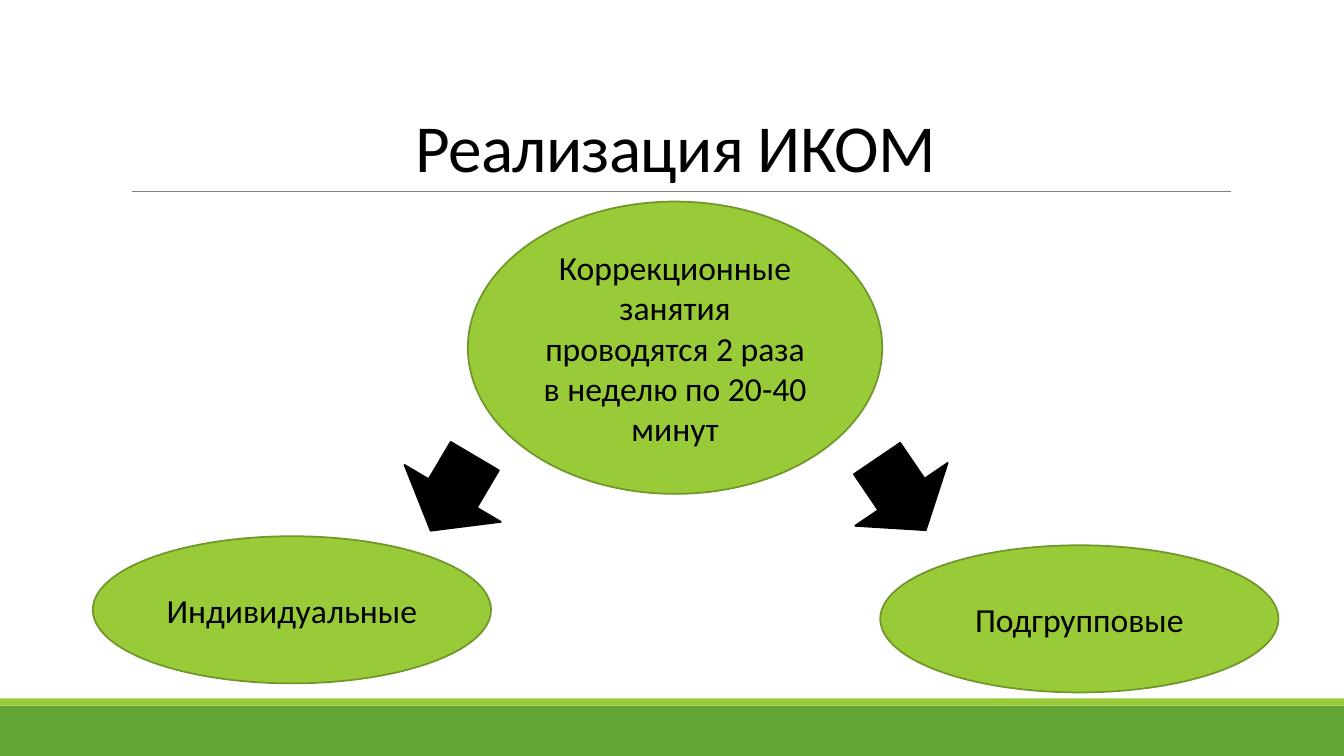
import pptx
import pptx.util
import pptx.dml.color
import pptx.enum.shapes
import pptx.enum.text
import pptx.oxml
from pptx.util import Inches

SHAPES = pptx.enum.shapes.MSO_SHAPE
ANCHORS = pptx.enum.text.MSO_ANCHOR
BLACK, LIME, GREEN, OLIVE, GREY = "000000", "99CB38", "63A537", "719629", "808080"


def add_figure(kind, box, fill, outline=None):
    figure = slide.shapes.add_shape(kind, *[Inches(length) for length in box])
    figure.shadow.inherit = False
    figure.fill.solid()
    figure.fill.fore_color.rgb = pptx.dml.color.RGBColor.from_string(fill)
    if outline:
        figure.line.color.rgb = pptx.dml.color.RGBColor.from_string(outline)
        figure.line.width = pptx.util.Pt(1.25)
    else:
        figure.line.fill.background()
    return figure


def write_text(holder, text, size, anchor):
    frame = holder.text_frame
    frame.word_wrap = True
    frame.vertical_anchor = anchor
    paragraph = frame.paragraphs[0]
    paragraph.alignment = pptx.enum.text.PP_ALIGN.CENTER
    run = paragraph.add_run()
    run.text = text
    font_format = {"name": "Calibri", "size": pptx.util.Pt(size)}
    for attribute, value in font_format.items():
        setattr(run.font, attribute, value)
    run.font.color.rgb = pptx.dml.color.RGBColor.from_string(BLACK)
    return paragraph


deck = pptx.Presentation()
deck.slide_width, deck.slide_height = Inches(13.33), Inches(7.5)
slide = deck.slides.add_slide(deck.slide_layouts[6])

# Footer bands
for top, height, color in [(7, 0.5, GREEN), (6.93, 0.07, LIME)]:
    add_figure(SHAPES.RECTANGLE, (0, top, 13.33, height), color)

# Rule under the title
title_rule = slide.shapes.add_connector(
    pptx.enum.shapes.MSO_CONNECTOR.STRAIGHT,
    Inches(1.31), Inches(1.9), Inches(12.21), Inches(1.9))
title_rule.line.color.rgb = pptx.dml.color.RGBColor.from_string(GREY)
title_rule.line.width = pptx.util.Pt(0.5)
title_rule._element.spPr.append(pptx.oxml.parse_xml(
    '<a:effectLst xmlns:a="http://schemas.openxmlformats.org/drawingml/2006/main"/>'))

# Title
title = slide.shapes.add_textbox(Inches(1.2), Inches(0.31), Inches(11), Inches(1.59))
heading = write_text(title, "Реализация ИКОМ", 48, ANCHORS.BOTTOM)
heading.line_spacing = 0.85
heading.runs[0].font._element.set("spc", "-50")

# Sessions and their two forms
sessions = [
    ("Коррекционные занятия проводятся 2 раза в неделю по 20-40 минут", (4.64, 2, 4.11, 2.9)),
    ("Индивидуальные", (0.92, 5.32, 3.95, 1.46)),
    ("Подгрупповые", (8.73, 5.41, 3.95, 1.46)),
]
for text, box in sessions:
    oval = add_figure(SHAPES.OVAL, box, LIME, OLIVE)
    write_text(oval, text, 24, ANCHORS.MIDDLE)

# Arrows from the sessions to each form
for left, top, angle in [(4.06, 4.34, 120.6), (8.51, 4.35, 55.8)]:
    arrow = add_figure(SHAPES.RIGHT_ARROW, (left, top, 0.86, 1.11), BLACK, BLACK)
    arrow.rotation = angle

deck.save("out.pptx")
